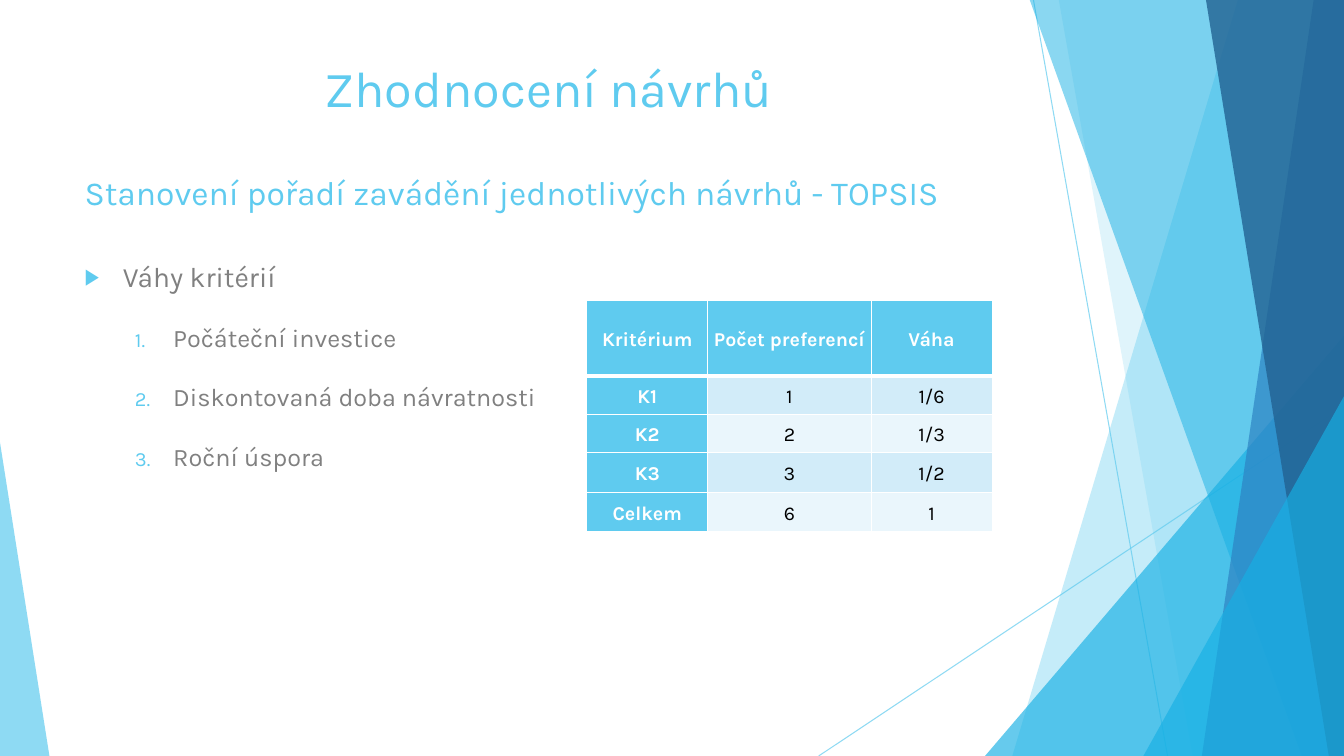
from lxml import etree
from pptx import Presentation
from pptx.dml.color import RGBColor
from pptx.enum.shapes import MSO_CONNECTOR, MSO_SHAPE
from pptx.enum.text import MSO_ANCHOR, PP_ALIGN
from pptx.oxml.ns import qn
from pptx.util import Inches, Pt

STRAIGHT = MSO_CONNECTOR.STRAIGHT
TRIANGLE = MSO_SHAPE.ISOSCELES_TRIANGLE
TOP, MIDDLE = MSO_ANCHOR.TOP, MSO_ANCHOR.MIDDLE
LEFT, CENTER = PP_ALIGN.LEFT, PP_ALIGN.CENTER
SKY, AZURE, BLUE, NAVY = "5FCBEF", "17B0E4", "2E83C3", "226292"
WHITE, BLACK, GREY = "FFFFFF", "000000", "808080"
BANDS = ("D2ECF9", "EAF6FC")
WIDTH, HEIGHT, BLEED = 13.33, 7.5, -0.01


def color(value):
    return RGBColor.from_string(value)


def add_node(parent, tag, **attributes):
    return etree.SubElement(parent, qn(tag), attributes)


class SlideBuilder:
    font = "Karla"

    def __init__(self, slide):
        self.slide = slide

    def paint(self, fill, value, opacity):
        fill.solid()
        fill.fore_color.rgb = color(value)
        tint = next(fill._xPr.iter(qn("a:srgbClr")))
        add_node(tint, "a:alpha", val=str(opacity * 1000))

    def finish(self, shape, value, opacity):
        shape.shadow.inherit = False
        shape.line.fill.background()
        self.paint(shape.fill, value, opacity)

    def line(self, start, end):
        line = self.slide.shapes.add_connector(
            STRAIGHT, *(Inches(n) for n in start + end))
        line.line.width = Pt(0.75)
        self.paint(line.line.fill, SKY, 70)
        add_node(line._element.spPr, "a:effectLst")

    def band(self, top_x, bottom_x, value, opacity):
        corners = [(WIDTH, BLEED), (WIDTH, HEIGHT), (bottom_x, HEIGHT)]
        outline = self.slide.shapes.build_freeform(
            Inches(top_x), Inches(BLEED), scale=1)
        outline.add_line_segments(
            [(Inches(x), Inches(y)) for x, y in corners], close=True)
        self.finish(outline.convert_to_shape(), value, opacity)

    def triangle(self, left, top, width, apex, value, opacity):
        shape = self.slide.shapes.add_shape(
            TRIANGLE, Inches(left), Inches(top), Inches(width), Inches(HEIGHT - top))
        shape.adjustments[0] = apex
        self.finish(shape, value, opacity)

    def style(self, paragraph, size, value, bold=False):
        font = paragraph.font
        font.name, font.size, font.bold = self.font, Pt(size), bold
        font.color.rgb = color(value)

    def text_frame(self, top, height, anchor):
        box = self.slide.shapes.add_textbox(
            Inches(0.74), Inches(top), Inches(9.4), Inches(height))
        frame = box.text_frame
        frame.word_wrap = True
        frame.vertical_anchor = anchor
        return frame

    def heading(self, text, top, height, size, align):
        paragraph = self.text_frame(top, height, MIDDLE).paragraphs[0]
        paragraph.text = text
        paragraph.alignment = align
        self.style(paragraph, size, SKY)

    def outline(self, topic, points, top, height):
        frame = self.text_frame(top, height, TOP)
        for index, text in enumerate([topic, *points]):
            paragraph = frame.add_paragraph() if index else frame.paragraphs[0]
            paragraph.text = text
            paragraph.level = 1 if index else 0
            paragraph.line_spacing = 1.5
            paragraph.space_before = Pt(10)
            properties = paragraph._p.get_or_add_pPr()
            properties.set("marL", str(Inches(0.88 if index else 0.38)))
            properties.set("indent", str(Inches(-0.38)))
            add_node(add_node(properties, "a:buClr"), "a:srgbClr", val=SKY)
            add_node(properties, "a:buSzPct", val="80000")
            if index:
                add_node(properties, "a:buFont", typeface=self.font)
                add_node(properties, "a:buAutoNum", type="arabicPeriod")
            else:
                add_node(properties, "a:buFont", typeface="Arial")
                add_node(properties, "a:buChar", char="▶")
            self.style(paragraph, 18 if index else 20, GREY)

    def borders(self, cell, row):
        widths = {"L": 1, "R": 1, "T": 3 if row == 1 else 1, "B": 1 if row else 3}
        for side, width in widths.items():
            edge = add_node(cell._tc.get_or_add_tcPr(), f"a:ln{side}", w=str(Pt(width)))
            add_node(add_node(edge, "a:solidFill"), "a:srgbClr", val=WHITE)

    def table(self, rows, left, top, widths, heights):
        table = self.slide.shapes.add_table(
            len(rows), len(widths), Inches(left), Inches(top),
            Inches(sum(widths)), Inches(sum(heights))).table
        for column, width in zip(table.columns, widths):
            column.width = Inches(width)
        for r, values in enumerate(rows):
            table.rows[r].height = Inches(heights[r])
            for c, value in enumerate(values):
                cell = table.cell(r, c)
                label = r == 0 or c == 0
                cell.margin_left = cell.margin_right = Inches(0.05)
                cell.margin_top = cell.margin_bottom = 0
                cell.vertical_anchor = MIDDLE
                self.borders(cell, r)
                cell.fill.solid()
                cell.fill.fore_color.rgb = color(SKY if label else BANDS[(r - 1) % 2])
                cell.text = value
                paragraph = cell.text_frame.paragraphs[0]
                paragraph.alignment = CENTER
                paragraph.line_spacing = 1.15
                self.style(paragraph, 14, WHITE if label else BLACK, label)


def main():
    deck = Presentation()
    deck.slide_width, deck.slide_height = Inches(WIDTH), Inches(HEIGHT)
    page = SlideBuilder(deck.slides.add_slide(deck.slide_layouts[6]))

    page.line((10.25, 0), (11.58, HEIGHT))
    page.line((WIDTH, 4.03), (8.12, HEIGHT))
    page.band(12.28, 10.04, SKY, 36)
    page.band(10.5, 11.83, SKY, 20)
    page.triangle(9.77, 3.33, 3.56, 1, AZURE, 66)
    page.band(10.21, 12.91, AZURE, 50)
    page.band(13.03, 11.92, BLUE, 70)
    page.band(11.96, 13.18, NAVY, 80)
    page.triangle(11.34, 3.93, 1.99, 1, AZURE, 66)
    page.triangle(0, 4.39, 0.49, 0, SKY, 70)

    page.heading("Zhodnocení návrhů", 0.29, 1.15, 36, CENTER)
    page.outline(
        "Váhy kritérií",
        ["Počáteční investice", "Diskontovaná doba návratnosti", "Roční úspora"],
        2.36, 4.24)
    page.heading("Stanovení pořadí zavádění jednotlivých návrhů - TOPSIS",
                 1.63, 0.55, 24, LEFT)
    page.table(
        [("Kritérium", "Počet preferencí", "Váha"),
         ("K1", "1", "1/6"),
         ("K2", "2", "1/3"),
         ("K3", "3", "1/2"),
         ("Celkem", "6", "1")],
        5.82, 2.98, (1.2, 1.62, 1.2), (0.75, 0.38, 0.38, 0.4, 0.38))
    deck.save("out.pptx")


if __name__ == "__main__":
    main()
